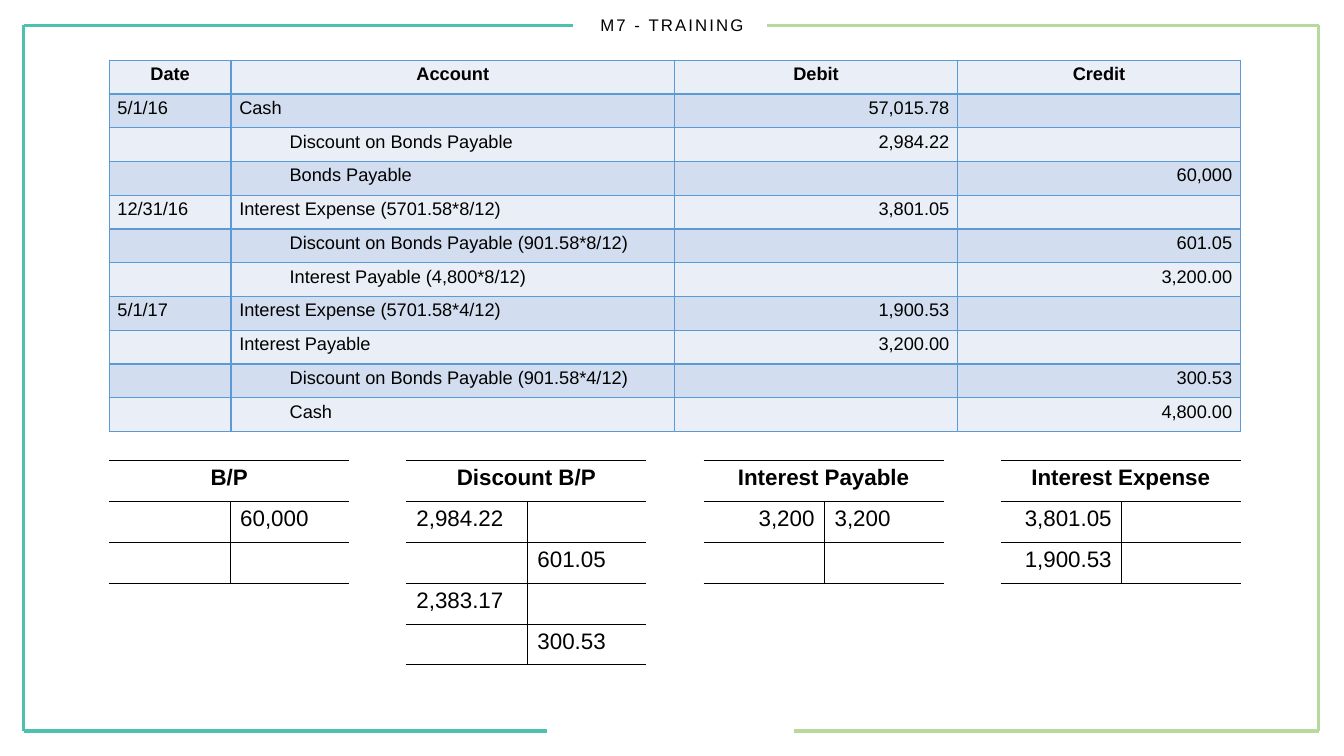
from dataclasses import dataclass

from lxml.etree import SubElement
from pptx import Presentation
from pptx.dml.color import RGBColor
from pptx.enum.shapes import MSO_CONNECTOR as Connector
from pptx.enum.text import MSO_ANCHOR as Anchor, MSO_AUTO_SIZE as AutoSize, PP_ALIGN as Align
from pptx.oxml.ns import qn
from pptx.slide import Slide
from pptx.table import Table, _Cell as Cell
from pptx.util import Cm, Pt


@dataclass(frozen=True)
class Theme:
    font: str = "Arial"
    ink: str = "000000"
    teal: str = "4CC1B0"
    green: str = "B7DA9C"
    grid: str = "5B9BD5"
    bands: tuple[str, str] = ("EAEFF7", "D2DEEF")
    title_size: float = 12
    journal_size: float = 13
    account_size: float = 16
    frame_width: float = 2.25


@dataclass(frozen=True)
class FrameLine:
    start: tuple[float, float]
    end: tuple[float, float]
    color: str


@dataclass(frozen=True)
class Entry:
    date: str
    account: str
    debit: str
    credit: str
    indented: bool = False


@dataclass(frozen=True)
class Account:
    name: str
    rows: list[tuple[str, str]]
    debit_align: Align = Align.LEFT


THEME = Theme()
LEFT, RIGHT, TOP, BOTTOM = 0.6, 33.23, 0.64, 18.42
FRAME = [
    FrameLine((LEFT, TOP), (LEFT, BOTTOM), THEME.teal),
    FrameLine((RIGHT, TOP), (RIGHT, BOTTOM), THEME.green),
    FrameLine((LEFT, BOTTOM), (13.79, BOTTOM), THEME.teal),
    FrameLine((20.02, BOTTOM), (RIGHT, BOTTOM), THEME.green),
    FrameLine((LEFT, TOP), (14.43, TOP), THEME.teal),
    FrameLine((19.33, TOP), (RIGHT, TOP), THEME.green),
]
JOURNAL = [
    Entry("Date", "Account", "Debit", "Credit"),
    Entry("5/1/16", "Cash", "57,015.78", ""),
    Entry("", "Discount on Bonds Payable", "2,984.22", "", True),
    Entry("", "Bonds Payable", "", "60,000", True),
    Entry("12/31/16", "Interest Expense (5701.58*8/12)", "3,801.05", ""),
    Entry("", "Discount on Bonds Payable (901.58*8/12)", "", "601.05", True),
    Entry("", "Interest Payable (4,800*8/12)", "", "3,200.00", True),
    Entry("5/1/17", "Interest Expense (5701.58*4/12)", "1,900.53", ""),
    Entry("", "Interest Payable", "3,200.00", ""),
    Entry("", "Discount on Bonds Payable (901.58*4/12)", "", "300.53", True),
    Entry("", "Cash", "", "4,800.00", True),
]
ACCOUNTS = [
    Account("B/P", [("", "60,000"), ("", "")]),
    Account("Discount B/P", [("2,984.22", ""), ("", "601.05"), ("2,383.17", ""), ("", "300.53")]),
    Account("Interest Payable", [("3,200", "3,200"), ("", "")], Align.RIGHT),
    Account("Interest Expense", [("3,801.05", ""), ("1,900.53", "")], Align.RIGHT),
]
TABLE_LEFT = 2.75
JOURNAL_TOP, JOURNAL_ROW = 1.52, 0.85
JOURNAL_COLUMNS = [3.07, 11.18, 7.13, 7.13]
ACCOUNT_TOP, ACCOUNT_ROW, ACCOUNT_STEP = 11.6, 1.03, 7.49
ACCOUNT_COLUMNS = [3.05, 3.0]


def add_title(page: Slide, text: str) -> None:
    title = page.shapes.title
    title.left, title.top, title.width, title.height = Cm(0), Cm(0), Cm(33.87), Cm(1.27)
    frame = title.text_frame
    frame.text = text
    frame.auto_size = AutoSize.NONE
    frame.vertical_anchor = Anchor.MIDDLE
    para = frame.paragraphs[0]
    para.alignment = Align.CENTER
    span = para.runs[0]
    span.font.name, span.font.size = THEME.font, Pt(THEME.title_size)
    span.font.color.rgb = RGBColor.from_string(THEME.ink)
    span.font._element.set("spc", "150")


def add_frame_line(page: Slide, line: FrameLine) -> None:
    connector = page.shapes.add_connector(
        Connector.STRAIGHT, *(Cm(value) for value in line.start + line.end))
    connector.line.color.rgb = RGBColor.from_string(line.color)
    connector.line.width = Pt(THEME.frame_width)
    SubElement(connector._element.spPr, qn("a:effectLst"))


def add_plain_table(page: Slide, left: float, top: float, columns: list[float],
                    row_count: int, row_height: float) -> Table:
    table = page.shapes.add_table(row_count, len(columns), Cm(left), Cm(top),
                                  Cm(sum(columns)), Cm(row_count * row_height)).table
    table.first_row = table.horz_banding = False
    for column, width in zip(table.columns, columns):
        column.width = Cm(width)
    for row in table.rows:
        row.height = Cm(row_height)
    return table


def set_borders(cell: Cell, color: str, left: float = 0, right: float = 0,
                top: float = 0, bottom: float = 0) -> None:
    properties = cell._tc.get_or_add_tcPr()
    for side, width in zip("LRTB", (left, right, top, bottom)):
        line = SubElement(properties, qn(f"a:ln{side}"), w=str(Pt(width)))
        if width:
            fill = SubElement(line, qn("a:solidFill"))
            SubElement(fill, qn("a:srgbClr"), val=color)
        else:
            SubElement(line, qn("a:noFill"))


def write_cell(cell: Cell, text: str, size: float, align: Align, bold: bool = False) -> None:
    cell.text_frame.text = text
    para = cell.text_frame.paragraphs[0]
    para.alignment = align
    for span in para.runs:
        span.font.name, span.font.size, span.font.bold = THEME.font, Pt(size), bold
        span.font.color.rgb = RGBColor.from_string(THEME.ink)
    if not text:
        # Keeps an empty row from growing to the default type size
        SubElement(para._p, qn("a:endParaRPr"), sz=str(int(size * 100)))


def add_journal(page: Slide) -> None:
    table = add_plain_table(page, TABLE_LEFT, JOURNAL_TOP, JOURNAL_COLUMNS,
                            len(JOURNAL), JOURNAL_ROW)
    for row, entry in enumerate(JOURNAL):
        header = row == 0
        texts = (entry.date, entry.account, entry.debit, entry.credit)
        for column, text in enumerate(texts):
            cell = table.cell(row, column)
            align = Align.CENTER if header else Align.RIGHT if column > 1 else Align.LEFT
            write_cell(cell, text, THEME.journal_size, align, header)
            cell.margin_left = cell.margin_right = Cm(0.21)
            cell.margin_top = cell.margin_bottom = Cm(0.1)
            set_borders(cell, THEME.grid, 1, 1, 1, 1)
            cell.fill.solid()
            cell.fill.fore_color.rgb = RGBColor.from_string(THEME.bands[row % 2])
        if entry.indented:
            para = table.cell(row, 1).text_frame.paragraphs[0]
            para.level = 1
            para._p.get_or_add_pPr().set("marL", str(Cm(1.27)))


def add_account(page: Slide, account: Account, left: float) -> None:
    table = add_plain_table(page, left, ACCOUNT_TOP, ACCOUNT_COLUMNS,
                            len(account.rows) + 1, ACCOUNT_ROW)
    # Heading across both sides
    table.cell(0, 0).merge(table.cell(0, 1))
    write_cell(table.cell(0, 0), account.name, THEME.account_size, Align.CENTER, True)
    for column in range(2):
        set_borders(table.cell(0, column), THEME.ink, top=1, bottom=0.5)
    # Debit and credit sides
    for row, (debit, credit) in enumerate(account.rows, start=1):
        write_cell(table.cell(row, 0), debit, THEME.account_size, account.debit_align)
        write_cell(table.cell(row, 1), credit, THEME.account_size, Align.LEFT)
        set_borders(table.cell(row, 0), THEME.ink, right=0.5, top=0.5, bottom=0.5)
        set_borders(table.cell(row, 1), THEME.ink, left=0.5, top=0.5, bottom=0.5)
    for cell in table.iter_cells():
        cell.fill.background()


def main() -> None:
    deck = Presentation()
    deck.slide_width, deck.slide_height = Cm(33.87), Cm(19.05)
    page = deck.slides.add_slide(deck.slide_layouts[5])
    for line in FRAME:
        add_frame_line(page, line)
    add_title(page, "M7 - TRAINING")
    add_journal(page)
    for index, account in enumerate(ACCOUNTS):
        add_account(page, account, TABLE_LEFT + index * ACCOUNT_STEP)
    deck.save("out.pptx")


if __name__ == "__main__":
    main()
